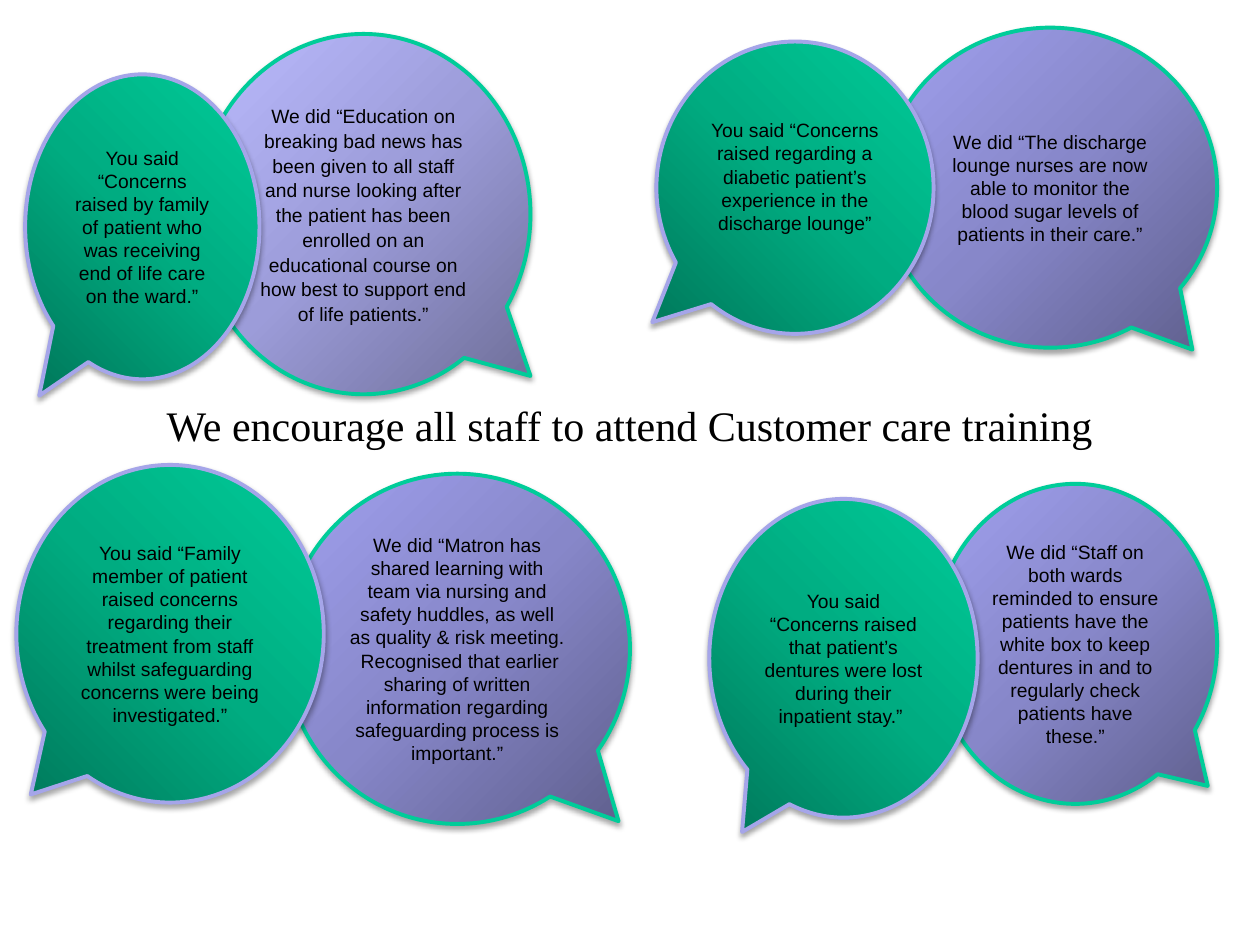
import pptx
import pptx.dml.color
import pptx.enum.shapes
import pptx.enum.text
import pptx.oxml
import pptx.oxml.ns
import pptx.util

Inches = pptx.util.Inches
Pt = pptx.util.Pt
ALIGN = pptx.enum.text.PP_ALIGN
NAMESPACE = pptx.oxml.ns.nsdecls("a")

# Each style: gradient from the tail outwards, line colour, corner of the focus
SAID = (("00795B", "00AC81", "00CC99"), "A5A5E9", 'l="0" r="100000"')
DID = (("5F5F8D", "8787C9", "A0A0EE"), "00CC99", 'l="100000" r="0"')
DID_LIGHT = (("6E6E98", "9C9CD9", "BBBBFF"), "00CC99", 'l="100000" r="0"')


def color(value):
    return pptx.dml.color.RGBColor.from_string(value)


def format_text(para, font_name, size):
    para.alignment = ALIGN.CENTER
    for span in para.runs:
        span.font.name = font_name
        span.font.size = Pt(size)
        span.font.color.rgb = color("000000")


def set_gradient(shape, colors, focus):
    stops = "".join(
        f'<a:gs pos="{index * 50000}"><a:srgbClr val="{value}"/></a:gs>'
        for index, value in enumerate(colors))
    gradient = pptx.oxml.parse_xml(
        f'<a:gradFill {NAMESPACE} rotWithShape="1"><a:gsLst>{stops}</a:gsLst>'
        f'<a:path path="circle"><a:fillToRect {focus} t="100000" b="0"/></a:path>'
        '</a:gradFill>')
    shape.element.spPr.insert(2, gradient)


def set_shadow(shape):
    shape.shadow.inherit = False
    effects = shape.element.spPr.find(pptx.oxml.ns.qn("a:effectLst"))
    effects.append(pptx.oxml.parse_xml(
        f'<a:outerShdw {NAMESPACE} blurRad="{Pt(3.1)}" dist="{Pt(1.8)}" '
        'dir="5400000" rotWithShape="0"><a:srgbClr val="000000">'
        '<a:alpha val="35000"/></a:srgbClr></a:outerShdw>'))


def add_callout(page, style, place, tail, text):
    colors, line_color, focus = style
    shape = page.shapes.add_shape(
        pptx.enum.shapes.MSO_SHAPE.OVAL_CALLOUT, *map(Inches, place))
    for index, offset in enumerate(tail):
        shape.adjustments[index] = offset
    set_gradient(shape, colors, focus)
    shape.line.color.rgb = color(line_color)
    shape.line.width = Pt(2.25)
    set_shadow(shape)
    frame = shape.text_frame
    frame.word_wrap = True
    frame.vertical_anchor = pptx.enum.text.MSO_ANCHOR.MIDDLE
    frame.text = text
    format_text(frame.paragraphs[0], "Arial", 11)
    return shape


def add_heading(page, place, text):
    box = page.shapes.add_textbox(*map(Inches, place))
    frame = box.text_frame
    frame.word_wrap = True
    frame.auto_size = pptx.enum.text.MSO_AUTO_SIZE.SHAPE_TO_FIT_TEXT
    frame.text = text
    format_text(frame.paragraphs[0], "Times New Roman", 24)


def main():
    deck = pptx.Presentation()
    deck.slide_width, deck.slide_height = Inches(10), Inches(7.5)
    page = deck.slides.add_slide(deck.slide_layouts[6])

    # Heading across the middle
    add_heading(page, (0.75, 3.12, 8.5, 0.5),
                "We encourage all staff to attend Customer care training")

    # Answers, behind the concerns
    add_callout(page, DID, (7.41, 3.84, 2.25, 2.54), (0.467, 0.444),
                "We did “Staff on both wards reminded to ensure patients have "
                "the white box to keep dentures in and to regularly check "
                "patients have these.”")
    add_callout(page, DID, (2.26, 3.76, 2.74, 2.78), (0.467, 0.492),
                "We did “Matron has shared learning with team via nursing and "
                "safety huddles, as well as quality & risk meeting.  Recognised "
                "that earlier sharing of written information regarding "
                "safeguarding process is important.”")
    education = add_callout(
        page, DID_LIGHT, (1.56, 0.27, 2.65, 2.86), (0.5, 0.449),
        "We did “Education on breaking bad news has been given to all staff "
        "and nurse looking after the patient has been enrolled on an "
        "educational course on how best to support end of life patients.”")
    education_para = education.text_frame.paragraphs[0]
    education_para.line_spacing = 1.07
    education_para.space_after = Pt(8)
    add_callout(page, DID, (7.01, 0.22, 2.65, 2.54), (0.426, 0.506),
                "We did “The discharge lounge nurses are now able to monitor "
                "the blood sugar levels of patients in their care.”")

    # Concerns, in front
    add_callout(page, SAID, (0.13, 3.69, 2.44, 2.68), (-0.453, 0.476),
                "You said “Family member of patient raised concerns regarding "
                "their treatment from staff whilst safeguarding concerns were "
                "being investigated.”")
    add_callout(page, SAID, (5.63, 3.96, 2.13, 2.53), (-0.378, 0.545),
                "You said “Concerns raised that patient’s dentures were lost "
                "during their inpatient stay.” ")
    lounge = add_callout(
        page, SAID, (5.21, 0.33, 2.2, 2.32), (-0.515, 0.46),
        "You said “Concerns raised regarding a diabetic patient’s experience "
        "in the discharge lounge”")
    lounge.text_frame.margin_bottom = Inches(0.23)
    add_callout(page, SAID, (0.2, 0.59, 1.86, 2.42), (-0.44, 0.554),
                "You said “Concerns raised by family of patient who was "
                "receiving end of life care on the ward.”")

    deck.save("out.pptx")


if __name__ == "__main__":
    main()
